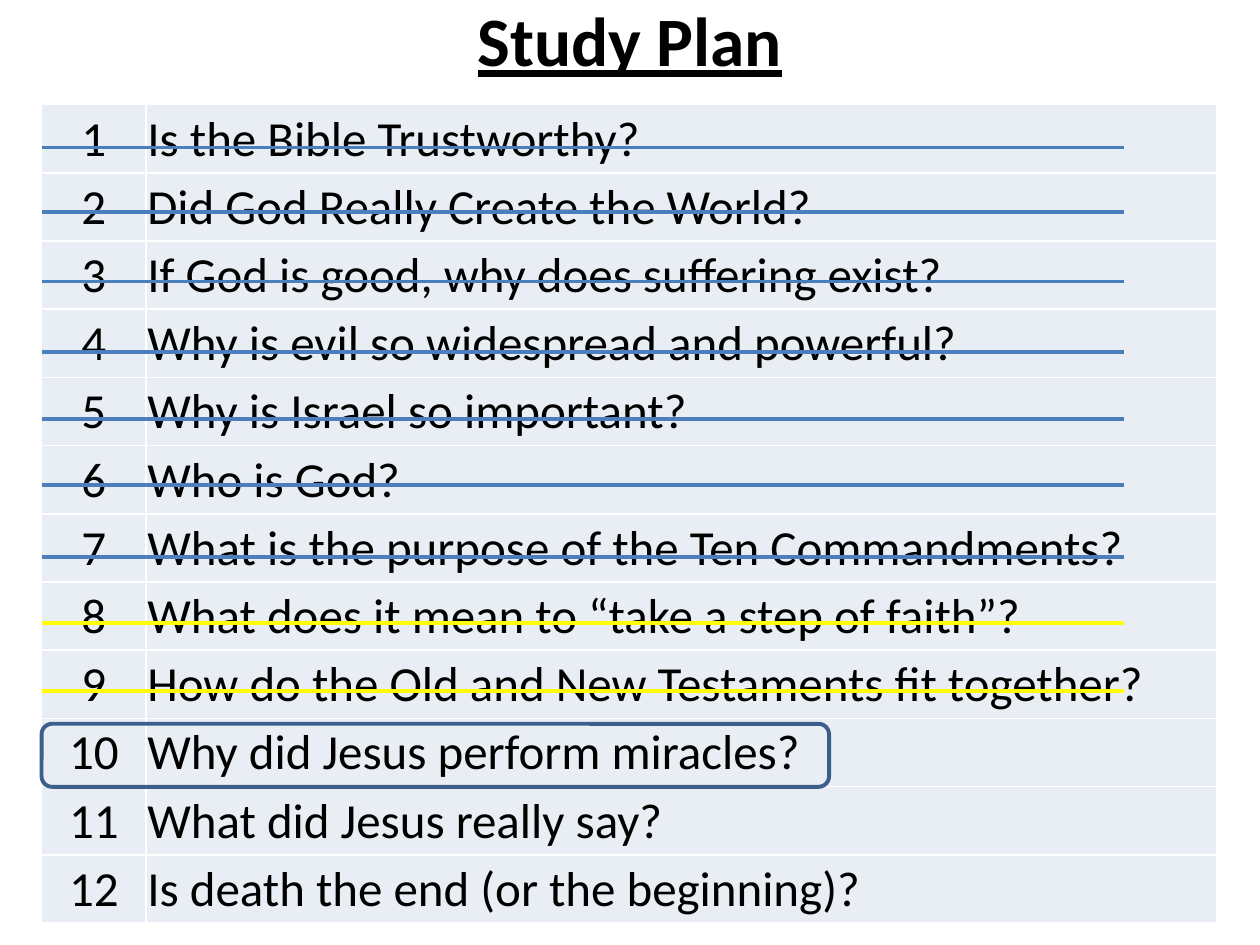
import pptx
import pptx.dml.color
import pptx.enum.shapes
import pptx.enum.text
import pptx.oxml
import pptx.oxml.ns
import pptx.util

WIDTH, HEIGHT = 10, 7.5
LEFT, TOP = 0.33, 0.83
COLUMNS = (0.83, 8.5)
ROW = 6.5 / 12

BLUE, YELLOW = "4B7EBC", "FFFF00"

# Each question, with the colour of its strike and the drop below mid-row
QUESTIONS = [
    ("Is the Bible Trustworthy?", BLUE, 0.07),
    ("Did God Really Create the World?", BLUE, 0.04),
    ("If God is good, why does suffering exist?", BLUE, 0.05),
    ("Why is evil so widespread and powerful?", BLUE, 0.07),
    ("Why is Israel so important?", BLUE, 0.06),
    ("Who is God?", BLUE, 0.04),
    ("What is the purpose of the Ten Commandments?", BLUE, 0.07),
    ("What does it mean to “take a step of faith”?", YELLOW, 0.05),
    ("How do the Old and New Testaments fit together?", YELLOW, 0.05),
    ("Why did Jesus perform miracles?", None, 0),
    ("What did Jesus really say?", None, 0),
    ("Is death the end (or the beginning)?", None, 0),
]
CURRENT = 9


def color(value):
    return pptx.dml.color.RGBColor.from_string(value)


def inches(*lengths):
    return [pptx.util.Inches(length) for length in lengths]


def row_top(row):
    return TOP + row * ROW


class StudyPage:
    """The current slide and the style of its parts."""

    font = "Calibri"
    ink = "000000"
    cell_fill = "E9EDF4"
    border = "FFFFFF"
    stroke = 2.25
    center = pptx.enum.text.PP_ALIGN.CENTER
    left = pptx.enum.text.PP_ALIGN.LEFT
    middle = pptx.enum.text.MSO_ANCHOR.MIDDLE

    def __init__(self, deck):
        self.page = deck.slides.add_slide(deck.slide_layouts[5])

    def set_text(self, frame, text, size, align, heading=False):
        frame.text = text
        para = frame.paragraphs[0]
        para.alignment = align
        for span in para.runs:
            span.font.name = self.font
            span.font.size = pptx.util.Pt(size)
            span.font.color.rgb = color(self.ink)
            span.font.bold = span.font.underline = heading

    def title(self, text):
        box = self.page.shapes.title
        box.left, box.top, box.width, box.height = inches(0.5, -0.08, 9, 0.78)
        self.set_text(box.text_frame, text, 39.6, self.center, heading=True)
        box.text_frame.vertical_anchor = self.middle

    def cell(self, cell, text, align):
        self.set_text(cell.text_frame, text, 28, align)
        cell.vertical_anchor = self.middle
        cell.margin_left, cell.margin_right, cell.margin_top, cell.margin_bottom = inches(
            0.01, 0.01, 0.01, 0)
        properties = cell._tc.get_or_add_tcPr()
        for side in ("lnL", "lnR", "lnT", "lnB"):
            properties.append(pptx.oxml.parse_xml(
                f'<a:{side} {pptx.oxml.ns.nsdecls("a")} w="12700"><a:solidFill>'
                f'<a:srgbClr val="{self.border}"/></a:solidFill></a:{side}>'))
        cell.fill.solid()
        cell.fill.fore_color.rgb = color(self.cell_fill)

    def table(self, texts):
        frame = self.page.shapes.add_table(
            len(texts), len(COLUMNS),
            *inches(LEFT, TOP, sum(COLUMNS), ROW * len(texts)))
        table = frame.table
        table.first_row = table.horz_banding = False
        for column, width in zip(table.columns, COLUMNS):
            column.width = pptx.util.Inches(width)
        for index, text in enumerate(texts):
            table.rows[index].height = pptx.util.Inches(ROW)
            self.cell(table.cell(index, 0), str(index + 1), self.center)
            self.cell(table.cell(index, 1), text, self.left)

    def strike(self, row, drop, line_color):
        y = row_top(row + 0.5) + drop
        line = self.page.shapes.add_connector(
            pptx.enum.shapes.MSO_CONNECTOR.STRAIGHT, *inches(LEFT, y, 8.92, y))
        line.line.color.rgb = color(line_color)
        line.line.width = pptx.util.Pt(self.stroke)
        line._element.spPr.append(pptx.oxml.parse_xml(
            f'<a:effectLst {pptx.oxml.ns.nsdecls("a")}/>'))

    def highlight(self, row):
        box = self.page.shapes.add_shape(
            pptx.enum.shapes.MSO_SHAPE.ROUNDED_RECTANGLE,
            *inches(LEFT, row_top(row) + 0.04, 6.25, 0.5))
        box.shadow.inherit = False
        box.fill.background()
        box.line.color.rgb = color("3A5F8C")
        box.line.width = pptx.util.Pt(self.stroke)


def main():
    deck = pptx.Presentation()
    deck.slide_width, deck.slide_height = inches(WIDTH, HEIGHT)
    plan = StudyPage(deck)

    # Heading and list of questions
    plan.title("Study Plan")
    plan.table([text for text, _, _ in QUESTIONS])

    # Finished questions are struck out, the current one is framed
    for row, (_, line_color, drop) in enumerate(QUESTIONS):
        if line_color:
            plan.strike(row, drop, line_color)
    plan.highlight(CURRENT)

    deck.save("out.pptx")


if __name__ == "__main__":
    main()
